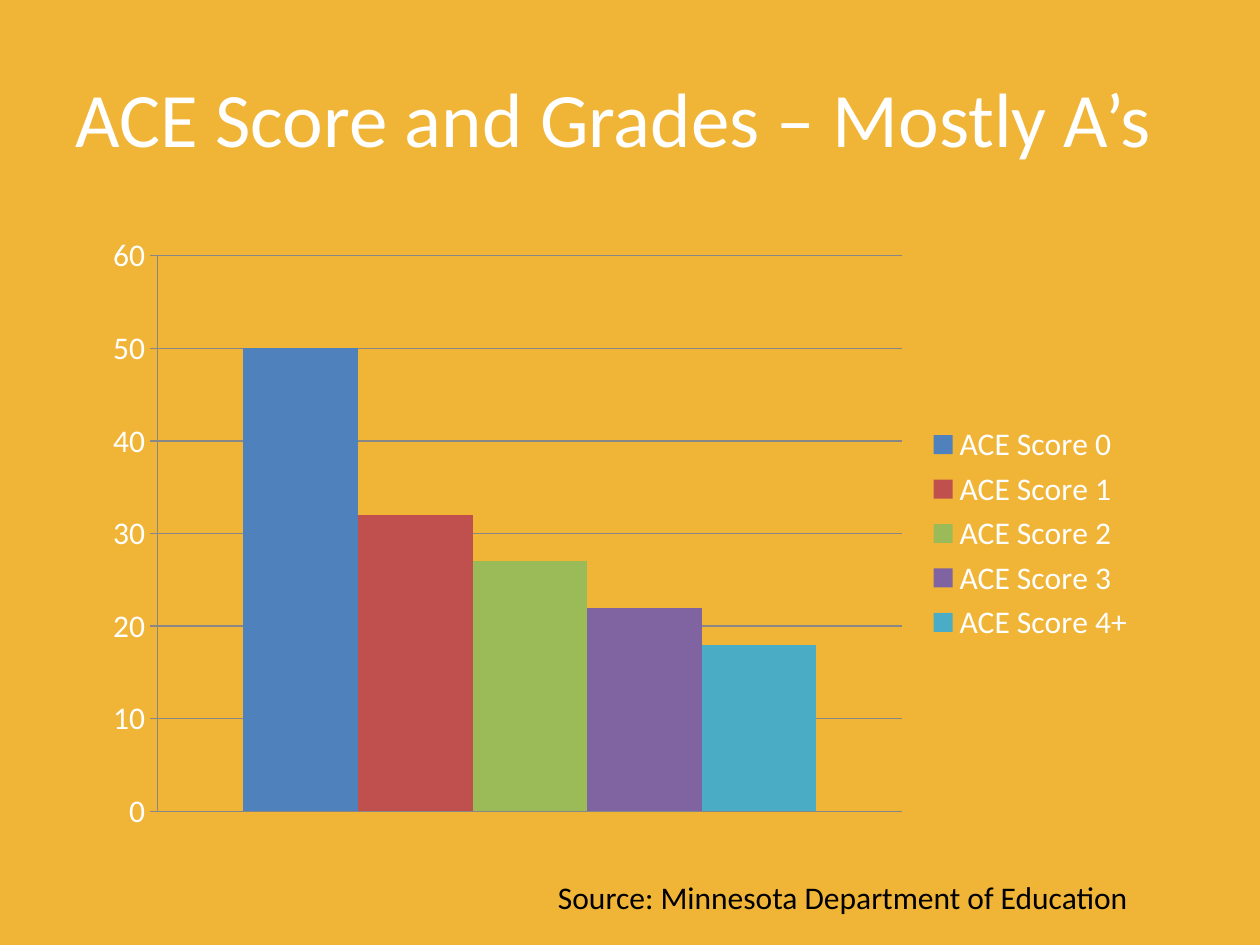
from pptx import Presentation
from pptx.chart.data import CategoryChartData
from pptx.dml.color import RGBColor
from pptx.enum.chart import XL_CHART_TYPE, XL_LEGEND_POSITION, XL_TICK_MARK
from pptx.enum.text import MSO_ANCHOR, MSO_AUTO_SIZE, PP_ALIGN
from pptx.util import Inches, Pt

BACKGROUND = RGBColor(0xF0, 0xB5, 0x37)
WHITE = RGBColor(0xFF, 0xFF, 0xFF)
BLACK = RGBColor(0x00, 0x00, 0x00)
GRID = RGBColor(0x87, 0x87, 0x87)
FONT = "Calibri"

TITLE = "ACE Score and Grades – Mostly A’s"
SOURCE = "Source: Minnesota Department of Education"
SCORES = [
    ("ACE Score 0", 50, RGBColor(0x4F, 0x81, 0xBD)),
    ("ACE Score 1", 32, RGBColor(0xC0, 0x50, 0x4D)),
    ("ACE Score 2", 27, RGBColor(0x9B, 0xBB, 0x59)),
    ("ACE Score 3", 22, RGBColor(0x80, 0x64, 0xA2)),
    ("ACE Score 4+", 18, RGBColor(0x4B, 0xAC, 0xC6)),
]


def box(left, top, width, height):
    return Inches(left), Inches(top), Inches(width), Inches(height)


def set_font(font, size, color):
    font.name = FONT
    font.size = Pt(size)
    font.color.rgb = color


def add_title(slide):
    title = slide.shapes.title
    title.left, title.top, title.width, title.height = box(0.5, 0.3, 9, 1.25)
    title.text_frame.text = TITLE
    title.text_frame.vertical_anchor = MSO_ANCHOR.MIDDLE
    heading = title.text_frame.paragraphs[0]
    heading.alignment = PP_ALIGN.LEFT
    set_font(heading.font, 44, WHITE)


def add_score_chart(slide):
    data = CategoryChartData()
    data.categories = ["1"]
    for name, share, _ in SCORES:
        data.add_series(name, [share])
    chart = slide.shapes.add_chart(
        XL_CHART_TYPE.COLUMN_CLUSTERED, *box(0.73, 1.78, 8.38, 4.91), data
    ).chart
    set_font(chart.font, 18, WHITE)
    chart.has_title = False
    chart.has_legend = True
    chart.legend.position = XL_LEGEND_POSITION.RIGHT
    chart.legend.include_in_layout = False
    chart.category_axis.visible = False

    shares = chart.value_axis
    shares.minimum_scale, shares.maximum_scale, shares.major_unit = 0, 60, 10
    shares.major_tick_mark = XL_TICK_MARK.OUTSIDE
    shares.has_major_gridlines = True
    for line in (shares.format.line, shares.major_gridlines.format.line):
        line.color.rgb = GRID
        line.width = Pt(0.75)

    plot = chart.plots[0]
    plot.gap_width = 150
    plot.overlap = 0
    plot.vary_by_categories = False
    for series, (_, _, color) in zip(plot.series, SCORES):
        series.format.fill.solid()
        series.format.fill.fore_color.rgb = color


def add_source(slide):
    frame = slide.shapes.add_textbox(*box(4.33, 6.92, 4.78, 0.4)).text_frame
    frame.word_wrap = False
    frame.auto_size = MSO_AUTO_SIZE.SHAPE_TO_FIT_TEXT
    frame.text = SOURCE
    set_font(frame.paragraphs[0].font, 18, BLACK)


def main():
    deck = Presentation()
    deck.slide_width, deck.slide_height = Inches(10), Inches(7.5)
    slide = deck.slides.add_slide(deck.slide_layouts.get_by_name("Title Only"))
    slide.background.fill.solid()
    slide.background.fill.fore_color.rgb = BACKGROUND
    add_title(slide)
    add_score_chart(slide)
    add_source(slide)
    deck.save("out.pptx")


if __name__ == "__main__":
    main()
